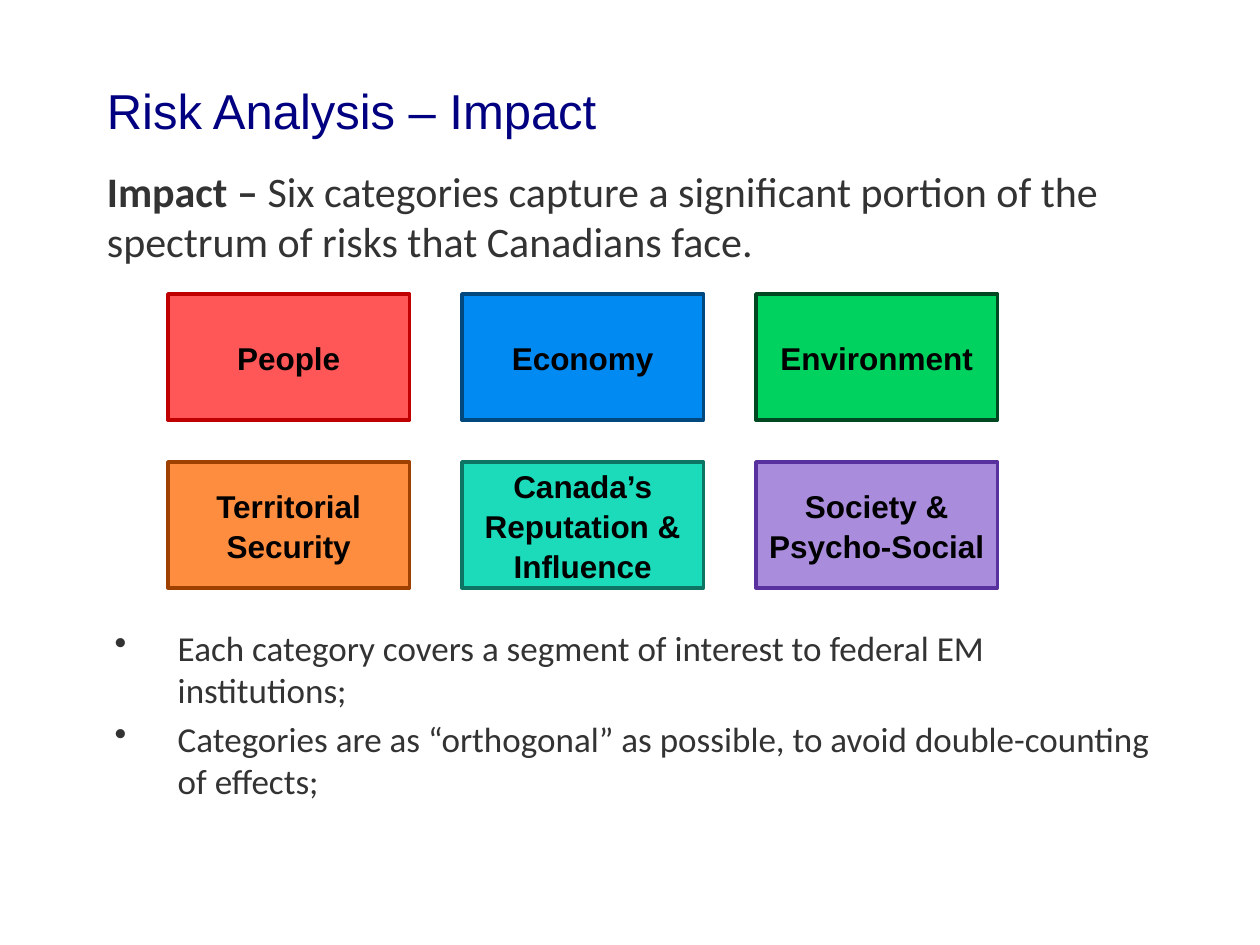
import pptx
import pptx.dml.color
import pptx.enum.shapes
import pptx.enum.text
import pptx.oxml.ns
import pptx.util
from lxml import etree

Pt = pptx.util.Pt
RGBColor = pptx.dml.color.RGBColor
ANCHOR = pptx.enum.text.MSO_ANCHOR
ALIGN = pptx.enum.text.PP_ALIGN

NAVY = RGBColor(0x00, 0x00, 0x80)
CHARCOAL = RGBColor(0x33, 0x33, 0x33)
BLACK = RGBColor(0x00, 0x00, 0x00)
RED, DARK_RED = RGBColor(0xFF, 0x57, 0x57), RGBColor(0xC0, 0x00, 0x00)
BLUE, DARK_BLUE = RGBColor(0x00, 0x8A, 0xF2), RGBColor(0x00, 0x48, 0x7E)
GREEN, DARK_GREEN = RGBColor(0x00, 0xD2, 0x5F), RGBColor(0x00, 0x48, 0x21)
ORANGE, BROWN = RGBColor(0xFF, 0x8D, 0x3F), RGBColor(0x9E, 0x40, 0x00)
TEAL, DARK_TEAL = RGBColor(0x1B, 0xDB, 0xBB), RGBColor(0x0E, 0x74, 0x63)
LILAC, PURPLE = RGBColor(0xA9, 0x8C, 0xDC), RGBColor(0x58, 0x31, 0x9F)

CATEGORIES = [
    ("People", RED, DARK_RED),
    ("Economy", BLUE, DARK_BLUE),
    ("Environment", GREEN, DARK_GREEN),
    ("Territorial Security", ORANGE, BROWN),
    ("Canada’s Reputation & Influence", TEAL, DARK_TEAL),
    ("Society & Psycho-Social", LILAC, PURPLE),
]
CHARACTERISTICS = [
    "Each category covers a segment of interest to federal EM institutions;",
    "Categories are as “orthogonal” as possible, to avoid double-counting of effects;",
]


def add_run(paragraph, text, *, font, size, color, bold=False):
    run = paragraph.add_run()
    run.text = text
    run.font.name = font
    run.font.size = Pt(size)
    run.font.bold = bold
    run.font.color.rgb = color


def add_bullet(paragraph, margin, hanging):
    properties = paragraph._p.get_or_add_pPr()
    properties.set("marL", str(Pt(margin)))
    properties.set("indent", str(-Pt(hanging)))
    bullet = etree.SubElement(properties, pptx.oxml.ns.qn("a:buChar"))
    bullet.set("char", "•")


class ImpactSlide:
    heading = {"font": "Arial", "size": 28, "color": NAVY}
    lead = {"font": "Calibri", "size": 24, "color": CHARCOAL}
    detail = {"font": "Calibri", "size": 20, "color": CHARCOAL}
    label = {"font": "Arial", "size": 18, "color": BLACK, "bold": True}

    def __init__(self, slide):
        self.slide = slide

    def text_frame(self, top, height, anchor=ANCHOR.TOP):
        """Add a text box across the content width."""
        box = self.slide.shapes.add_textbox(Pt(54), Pt(top), Pt(612), Pt(height))
        frame = box.text_frame
        frame.word_wrap = True
        frame.vertical_anchor = anchor
        return frame

    def title(self, text):
        frame = self.text_frame(18, 90, ANCHOR.MIDDLE)
        add_run(frame.paragraphs[0], text, **self.heading)

    def introduction(self, term, explanation):
        paragraph = self.text_frame(91, 70).paragraphs[0]
        add_run(paragraph, term, bold=True, **self.lead)
        add_run(paragraph, explanation, **self.lead)

    def category(self, text, left, top, width, height, fill, outline):
        card = self.slide.shapes.add_shape(
            pptx.enum.shapes.MSO_SHAPE.RECTANGLE,
            Pt(left), Pt(top), Pt(width), Pt(height))
        card.shadow.inherit = False
        card.fill.solid()
        card.fill.fore_color.rgb = fill
        card.line.color.rgb = outline
        card.line.width = Pt(2)
        frame = card.text_frame
        frame.word_wrap = True
        frame.margin_left = frame.margin_right = Pt(6)
        frame.vertical_anchor = ANCHOR.MIDDLE
        paragraph = frame.paragraphs[0]
        paragraph.alignment = ALIGN.CENTER
        paragraph.line_spacing = 1.05
        add_run(paragraph, text, **self.label)

    def category_grid(self, categories, columns=3):
        for index, (text, fill, outline) in enumerate(categories):
            row, column = divmod(index, columns)
            self.category(text, 96 + 168 * column, 168 + 96 * row, 138, 72,
                          fill, outline)

    def bullets(self, items):
        frame = self.text_frame(354.5, 110)
        for index, item in enumerate(items):
            paragraph = frame.add_paragraph() if index else frame.paragraphs[0]
            add_bullet(paragraph, margin=40.5, hanging=36)
            if index:
                paragraph.space_before = Pt(4)
            add_run(paragraph, item, **self.detail)


def main():
    deck = pptx.Presentation()
    deck.slide_width, deck.slide_height = Pt(720), Pt(540)
    impact = ImpactSlide(deck.slides.add_slide(deck.slide_layouts[6]))
    impact.title("Risk Analysis – Impact")
    impact.introduction(
        "Impact –",
        " Six categories capture a significant portion of the spectrum of risks "
        "that Canadians face.")
    impact.category_grid(CATEGORIES)
    impact.bullets(CHARACTERISTICS)
    deck.save("out.pptx")


if __name__ == "__main__":
    main()
